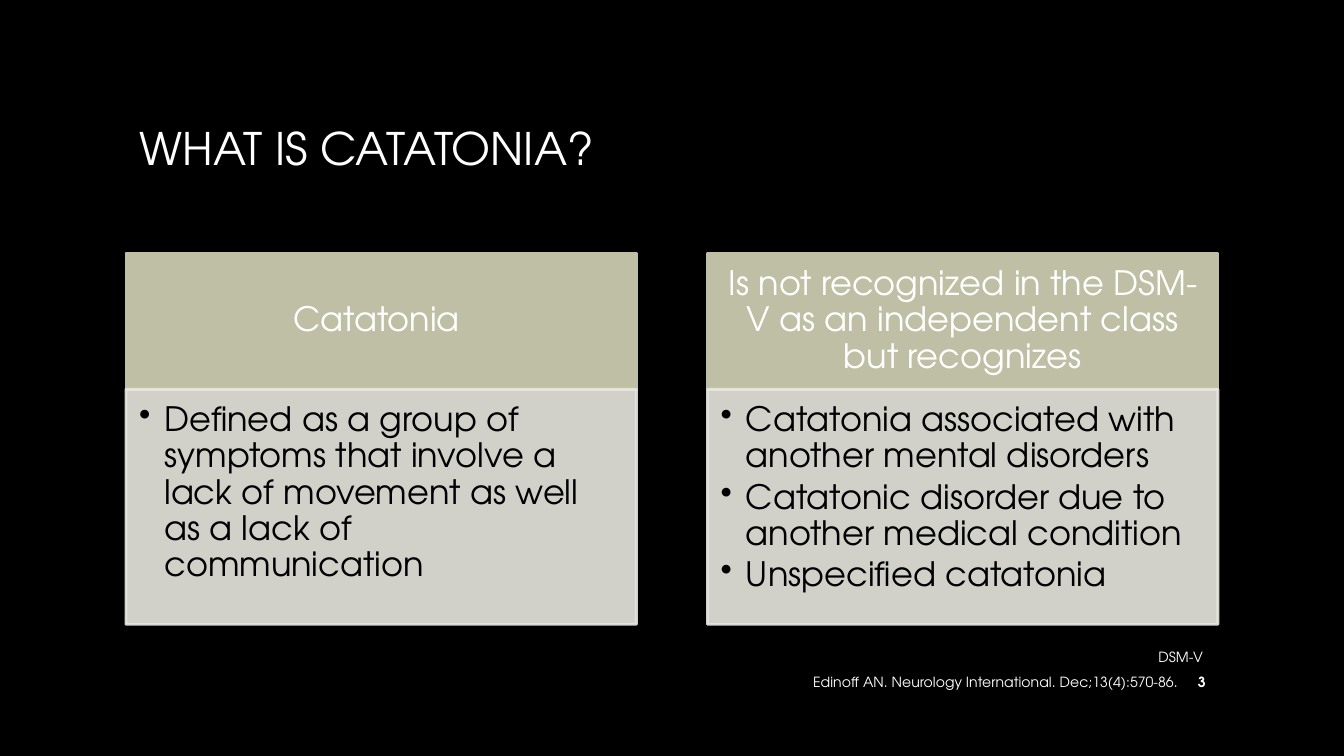
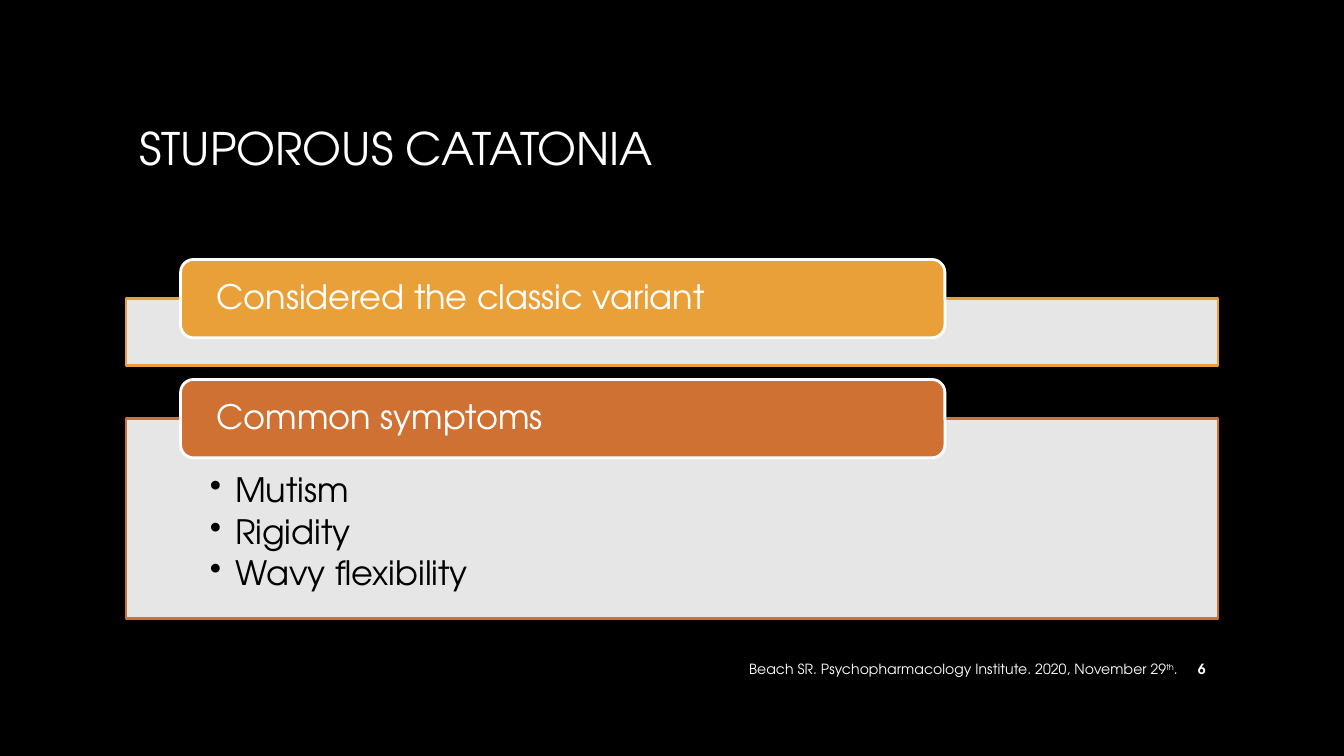
from lxml import etree
from pptx import Presentation
from pptx.dml.color import RGBColor
from pptx.enum.shapes import MSO_SHAPE as Shape
from pptx.enum.text import MSO_ANCHOR as Anchor, PP_ALIGN as Align
from pptx.oxml.ns import qn
from pptx.util import Pt

FACE = "TeX Gyre Adventor"
WHITE, BLACK, BACK = "FFFFFF", "000000", "000000"
SAGE, PALE, AMBER, RUST = "BFBFA5", "E8E8E1", "E9A039", "CF7133"
LEFT, WIDE = 67.5, 585
RIGHT = LEFT + WIDE
PAD = 7.2
HEAD = dict(size=18, color=WHITE)
ITEM = dict(size=18, color=BLACK)
NOTE = dict(size=7.5, color=WHITE)


def rgb(code):
    return RGBColor.from_string(code)


def style(font, size, color, **more):
    font.color.rgb = rgb(color)
    for key, val in dict(name=FACE, size=Pt(size), **more).items():
        setattr(font, key, val)


def fit(frame, pads=(PAD, 3.6, PAD, 3.6), anchor=Anchor.MIDDLE):
    """Wrap the frame and set its left, top, right and bottom insets."""
    frame.word_wrap = True
    frame.vertical_anchor = anchor
    for side, pad in zip(("left", "top", "right", "bottom"), pads):
        setattr(frame, "margin_" + side, Pt(pad))


def fade(fill):
    """Make a solid fill 90% opaque."""
    color = fill._xPr.find(qn("a:solidFill"))[0]
    etree.SubElement(color, qn("a:alpha"), val="90000")


def block(slide, box, fill, line, kind=Shape.RECTANGLE):
    shape = slide.shapes.add_shape(kind, *map(Pt, box))
    shape.shadow.inherit = False
    shape.fill.solid()
    shape.fill.fore_color.rgb = rgb(fill)
    shape.line.color.rgb = rgb(line)
    shape.line.width = Pt(1.5)
    return shape


def label(shape, text, align, pads):
    fit(shape.text_frame, pads)
    para = shape.text_frame.paragraphs[0]
    para.text = text
    para.alignment = align
    para.line_spacing = 0.9
    style(para.font, **HEAD)


def bullets(shape, items, pads):
    frame = shape.text_frame
    fit(frame, pads, Anchor.TOP)
    for i, item in enumerate(items):
        para = frame.add_paragraph() if i else frame.paragraphs[0]
        para.text = item
        props = para._p.get_or_add_pPr()
        props.set("marL", str(Pt(13.5)))
        props.set("indent", str(-Pt(13.5)))
        color = etree.SubElement(props, qn("a:buClr"))
        etree.SubElement(color, qn("a:srgbClr"), val=BLACK)
        etree.SubElement(props, qn("a:buChar"), char="•")
        para.alignment = Align.LEFT
        para.line_spacing = 0.9
        para.space_after = Pt(2.7)
        style(para.font, **ITEM)


def start(deck, text):
    """Add a slide with its title."""
    slide = deck.slides.add_slide(deck.slide_layouts[5])
    title = slide.shapes.title
    box = dict(left=LEFT, top=36, width=WIDE, height=86.4)
    for key, val in box.items():
        setattr(title, key, Pt(val))
    fit(title.text_frame)
    para = title.text_frame.paragraphs[0]
    para.text = text
    para.alignment = Align.LEFT
    style(para.font, size=24, color=WHITE)
    return slide


def footer(slide, width, cite, page, above=None):
    """Place the source and page number at two right tab stops.

    cite is a list of (text, raised) parts.
    """
    box = (RIGHT + 1.2 - width, 347.8, width, 21.6)
    frame = slide.shapes.add_textbox(*map(Pt, box)).text_frame
    fit(frame)
    para = frame.paragraphs[0]
    if above:
        para.text = above
        para.alignment = Align.RIGHT
        para.space_after = Pt(4.5)
        style(para.font, **NOTE)
        para = frame.add_paragraph()
    edge = width - 2 * PAD
    tabs = etree.SubElement(para._p.get_or_add_pPr(), qn("a:tabLst"))
    for stop in (edge - 15.4, edge - 0.4):
        etree.SubElement(tabs, qn("a:tab"), pos=str(Pt(stop)), algn="r")
    para.alignment = Align.LEFT
    para.space_after = Pt(4.5)
    for text, raised in [("\t", False), *cite, ("\t", False)]:
        run = para.add_run()
        run.text = text
        style(run.font, **NOTE)
        if raised:
            run._r.get_or_add_rPr().set("baseline", "30000")
    run = para.add_run()
    run.text = page
    style(run.font, bold=True, **NOTE)


def card(slide, box, head, items):
    """Draw a heading over a list that fills the rest of the box."""
    x, y, w, h = box
    top = 73
    shape = block(slide, (x, y, w, top), SAGE, SAGE)
    label(shape, head, Align.CENTER, (10, 5.8, 10, 5.8))
    body = block(slide, (x, y + top, w, h - top), PALE, PALE)
    fade(body.fill)
    fade(body.line.fill)
    bullets(body, items, (PAD, PAD, 10, 11.5))


def panel(slide, box, color, head, items):
    """Draw a framed list with a rounded heading over its top edge."""
    x, y, w, h = box
    body = block(slide, box, WHITE, color)
    fade(body.fill)
    if items:
        bullets(body, items, (45, 29.5, 45, 10))
    tab = (x + w * 0.05, y - 21, w * 0.7, 42)
    shape = block(slide, tab, color, WHITE, Shape.ROUNDED_RECTANGLE)
    label(shape, head, Align.LEFT, (17.2, 2, 17.2, 2))


def define(deck):
    slide = start(deck, "WHAT IS CATATONIA?")
    cards = [
        ("Catatonia ", [
            "Defined as a group of symptoms that involve a lack of movement "
            "as well as a lack of communication"]),
        ("Is not recognized in the DSM-V as an independent class "
         "but recognizes", [
             "Catatonia associated with another mental disorders",
             "Catatonic disorder due to another medical condition",
             "Unspecified catatonia"]),
    ]
    width = 273.5
    for i, (head, items) in enumerate(cards):
        x = LEFT + i * (WIDE - width)
        card(slide, (x, 135.5, width, 199), head, items)
    cite = "Edinoff AN. Neurology International. Dec;13(4):570-86."
    footer(slide, 299, [(cite, False)], "3", above="DSM-V ")


def stupor(deck):
    slide = start(deck, "STUPOROUS CATATONIA")
    panels = [
        (36, AMBER, "Considered the classic variant", []),
        (107, RUST, "Common symptoms",
         ["Mutism", "Rigidity", "Wavy flexibility"]),
    ]
    y, gap = 160, 28.3
    for high, color, head, items in panels:
        panel(slide, (LEFT, y, WIDE, high), color, head, items)
        y += high + gap
    cite = "Beach SR. Psychopharmacology Institute. 2020, November 29"
    footer(slide, 327.5, [(cite, False), ("th", True), (".", False)], "6")


def main():
    deck = Presentation()
    deck.slide_width, deck.slide_height = Pt(720), Pt(405)
    fill = deck.slide_master.background.fill
    fill.solid()
    fill.fore_color.rgb = rgb(BACK)
    define(deck)
    stupor(deck)
    deck.save("out.pptx")


if __name__ == "__main__":
    main()
